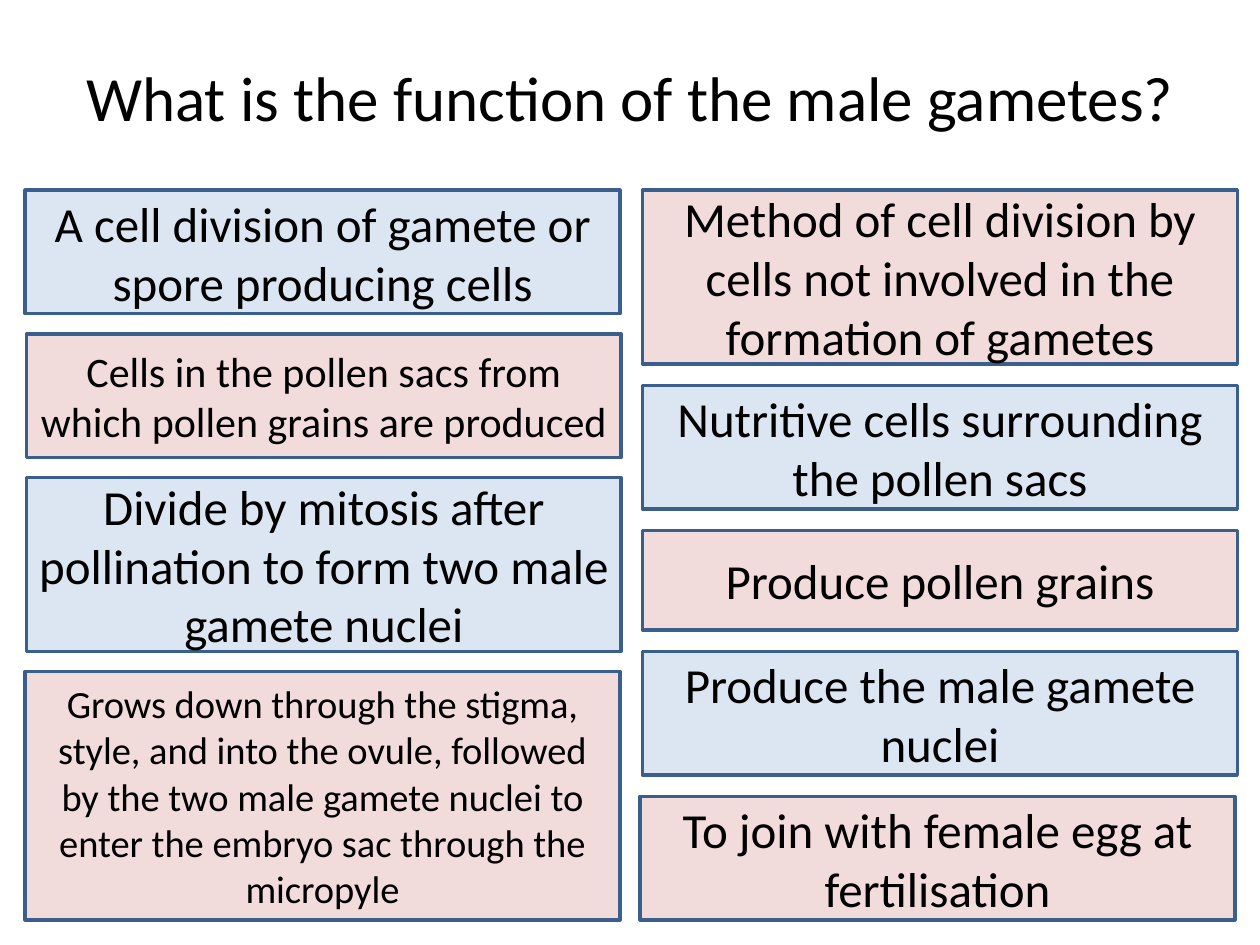
from pptx import Presentation
from pptx.dml.color import RGBColor
from pptx.enum.shapes import MSO_SHAPE
from pptx.enum.text import MSO_ANCHOR, PP_ALIGN
from pptx.util import Inches, Pt

BLUE = RGBColor(0xDC, 0xE6, 0xF2)
PINK = RGBColor(0xF2, 0xDC, 0xDB)
EDGE = RGBColor(0x3A, 0x5F, 0x8C)
BLACK = RGBColor(0, 0, 0)

WIDTH = 4.72
TOP = 1.51

LEFT = [
    (0.2, 0.98, 28, "A cell division of gamete or spore producing cells"),
    (0.21, 0.98, 24, "Cells in the pollen sacs from which pollen grains are produced"),
    (0.21, 1.38, 28, "Divide by mitosis after pollination to form two male gamete nuclei"),
    (0.2, 1.97, 22, "Grows down through the stigma, style, and into the ovule, "
     "followed by the two male gamete nuclei to enter the embryo sac "
     "through the micropyle"),
]
RIGHT = [
    (5.1, 1.38, 28, "Method of cell division by cells not involved in the formation of gametes"),
    (5.1, 0.98, 28, "Nutritive cells surrounding the pollen sacs"),
    (5.1, 0.79, 28, "Produce pollen grains"),
    (5.1, 0.98, 28, "Produce the male gamete nuclei"),
    (5.08, 0.98, 28, "To join with female egg at fertilisation"),
]


class Deck:
    font = {"name": "Calibri", "bold": False}
    frame = {"word_wrap": True, "vertical_anchor": MSO_ANCHOR.MIDDLE}

    def __init__(self):
        self.deck = Presentation()
        self.deck.slide_width = Inches(10)
        self.deck.slide_height = Inches(7.5)
        self.slide = self.deck.slides.add_slide(self.deck.slide_layouts[5])

    def apply(self, item, style):
        for key, value in style.items():
            setattr(item, key, value)

    def label(self, shape, text, size):
        frame = shape.text_frame
        frame.text = text
        self.apply(frame, self.frame)
        line = frame.paragraphs[0]
        line.alignment = PP_ALIGN.CENTER
        font = line.runs[0].font
        self.apply(font, {**self.font, "size": Pt(size)})
        font.color.rgb = BLACK

    def title(self, text):
        shape = self.slide.shapes.title
        self.apply(shape, {"left": Inches(0), "top": Inches(0.14),
                           "width": Inches(10), "height": Inches(1.25)})
        self.label(shape, text, 36)

    def button(self, left, top, height, text, size, fill):
        shape = self.slide.shapes.add_shape(
            MSO_SHAPE.ACTION_BUTTON_CUSTOM,
            Inches(left), Inches(top), Inches(WIDTH), Inches(height))
        shape.shadow.inherit = False
        shape.fill.solid()
        shape.fill.fore_color.rgb = fill
        shape.line.color.rgb = EDGE
        shape.line.width = Pt(2)
        self.label(shape, text, size)

    def column(self, items, gap, fills):
        top = TOP
        for row, (left, height, size, text) in enumerate(items):
            self.button(left, top, height, text, size, fills[row % 2])
            top += height + gap


def main():
    page = Deck()
    page.title("What is the function of the male gametes?")
    page.column(LEFT, 0.16, (BLUE, PINK))
    page.column(RIGHT, 0.17, (PINK, BLUE))
    page.deck.save("out.pptx")


if __name__ == "__main__":
    main()
